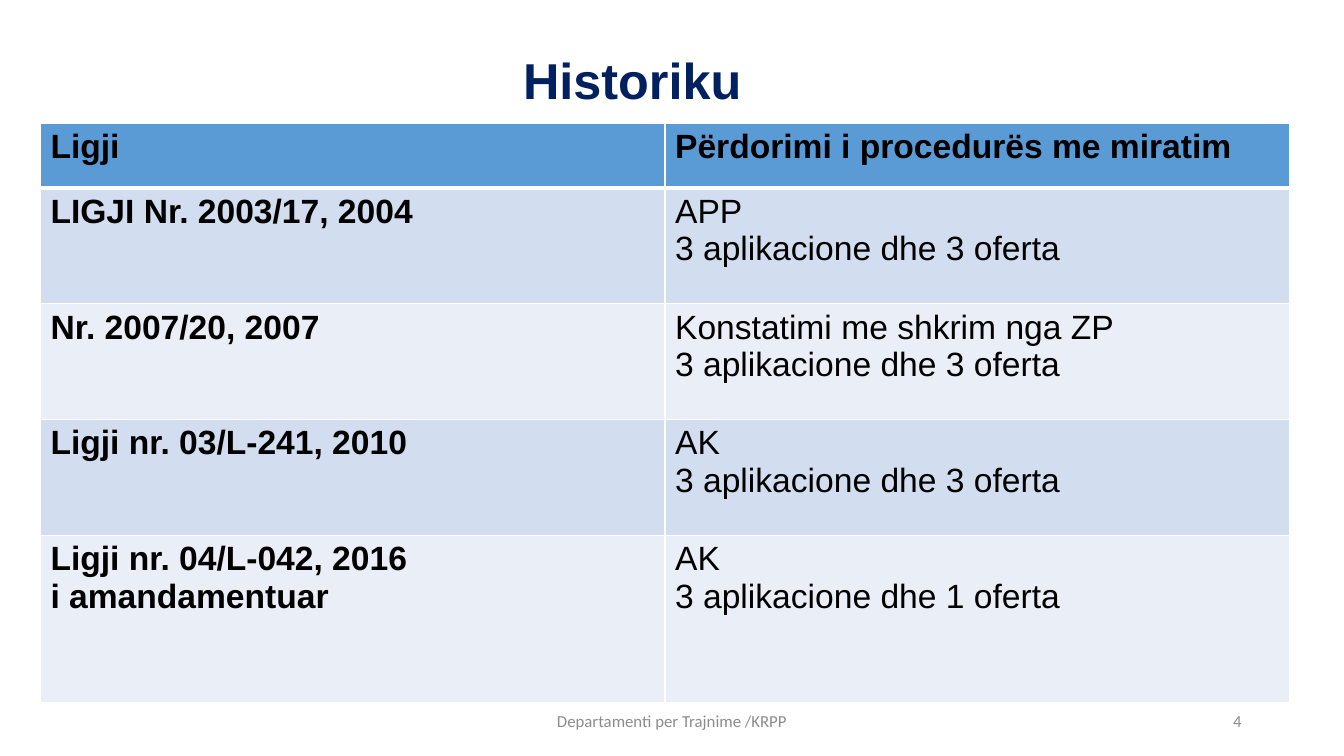
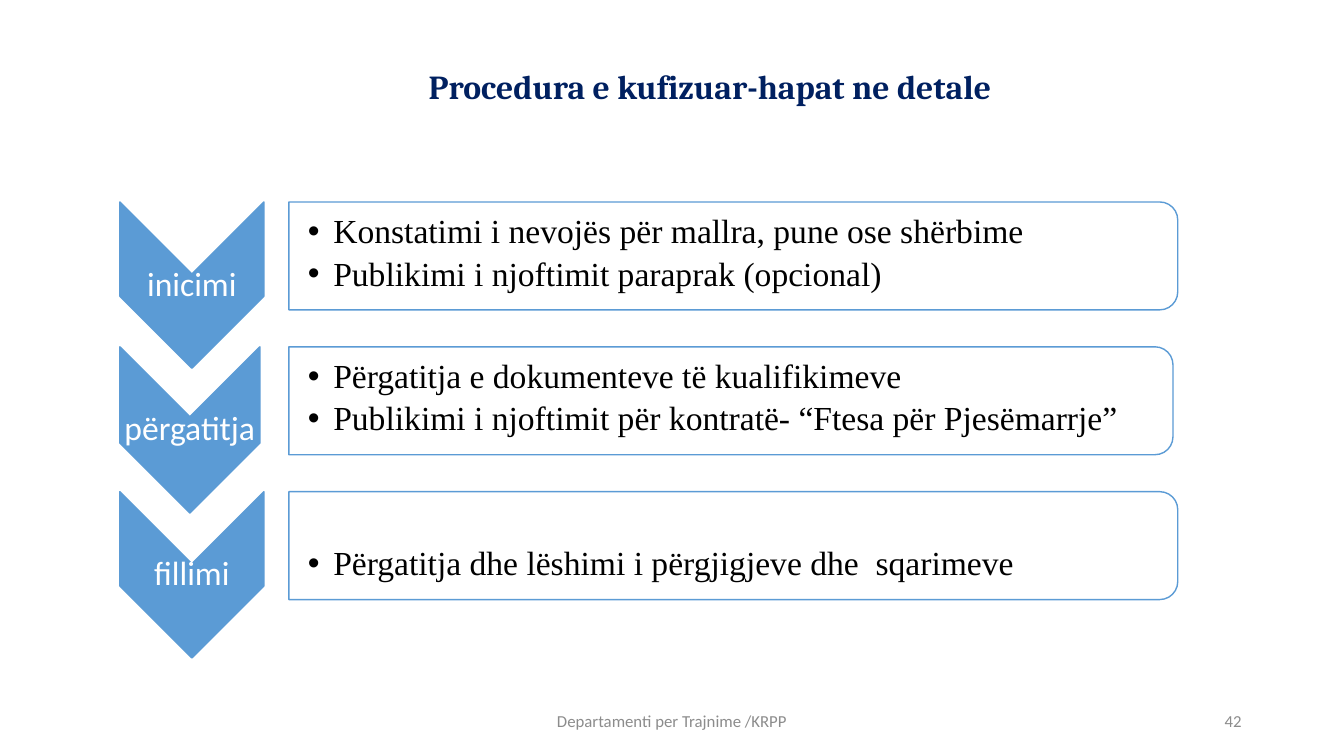
from dataclasses import dataclass
from typing import NamedTuple

from lxml import etree
from pptx import Presentation
from pptx.dml.color import RGBColor
from pptx.enum.shapes import MSO_SHAPE
from pptx.enum.text import MSO_ANCHOR, PP_ALIGN
from pptx.oxml.ns import qn
from pptx.util import Cm, Pt

LEFT, CENTER, RIGHT = PP_ALIGN.LEFT, PP_ALIGN.CENTER, PP_ALIGN.RIGHT
TOP, MIDDLE, BOTTOM = MSO_ANCHOR.TOP, MSO_ANCHOR.MIDDLE, MSO_ANCHOR.BOTTOM
CHEVRON = MSO_SHAPE.CHEVRON
PANEL = MSO_SHAPE.ROUND_2_SAME_RECTANGLE
BLANK_LAYOUT = 6


class Box(NamedTuple):
    """Left, top, width and height in centimetres."""
    left: float
    top: float
    width: float
    height: float

    def lengths(self):
        return [Cm(value) for value in self]


class TextStyle(NamedTuple):
    name: str
    size: float
    color: str
    bold: bool = False
    align: PP_ALIGN = LEFT
    line_spacing: float = 1.0
    space_after: float = 0


@dataclass(frozen=True)
class Theme:
    accent: str = "5B9BD5"
    white: str = "FFFFFF"
    bands: tuple = ("D2DEEF", "EAEFF7")
    history_title: TextStyle = TextStyle("Arial", 36, "002060", True, CENTER, 0.9)
    steps_title: TextStyle = TextStyle("Cambria", 24, "002060", True, CENTER, 0.9)
    cell: TextStyle = TextStyle("Arial", 24, "000000")
    cell_bold: TextStyle = TextStyle("Arial", 24, "000000", True)
    step_label: TextStyle = TextStyle("Calibri", 24, "FFFFFF", False, CENTER, 0.9)
    step_item: TextStyle = TextStyle("Times New Roman", 24, "000000", False, LEFT, 0.9, 4.4)
    footer: TextStyle = TextStyle("Calibri", 12, "8C8C8C", False, CENTER)
    page_number: TextStyle = TextStyle("Calibri", 12, "8C8C8C", False, RIGHT)


THEME = Theme()
FOOTER_TEXT = "Departamenti per Trajnime /KRPP"
FOOTER_BOX = Box(11.22, 17.65, 11.43, 1.01)
NUMBER_BOX = Box(23.92, 17.65, 7.62, 1.01)

HISTORY_ROWS = [
    (["Ligji"], ["Përdorimi i procedurës me miratim"]),
    (["LIGJI Nr. 2003/17, 2004"], ["APP", "3 aplikacione dhe 3 oferta"]),
    (["Nr. 2007/20, 2007"],
     ["Konstatimi me shkrim nga ZP", "3 aplikacione dhe 3 oferta"]),
    (["Ligji nr. 03/L-241, 2010"], ["AK", "3 aplikacione dhe 3 oferta"]),
    (["Ligji nr. 04/L-042, 2016", "i amandamentuar"],
     ["AK", "3 aplikacione dhe 1 oferta"]),
]
HISTORY_ROW_HEIGHTS = [1.63, 2.92, 2.92, 2.92, 4.22]

# Label, items, chevron width, panel width
STEPS = [
    ("inicimi",
     ["Konstatimi i nevojës për mallra, pune ose shërbime",
      "Publikimi i njoftimit paraprak (opcional)"], 3.63, 22.4),
    ("përgatitja",
     ["Përgatitja e dokumenteve të kualifikimeve",
      "Publikimi i njoftimit për kontratë- “Ftesa për Pjesëmarrje”"], 3.53, 22.28),
    ("fillimi",
     ["Përgatitja dhe lëshimi i përgjigjeve dhe  sqarimeve"], 3.63, 22.4),
]


def set_attributes(target, values):
    for name, value in values.items():
        setattr(target, name, value)


def set_fill(target, color):
    target.fill.solid()
    target.fill.fore_color.rgb = RGBColor.from_string(color)


def write_lines(frame, lines, style):
    for index, line in enumerate(lines):
        paragraph = frame.add_paragraph() if index else frame.paragraphs[0]
        set_attributes(paragraph, {
            "alignment": style.align,
            "line_spacing": style.line_spacing,
            "space_after": Pt(style.space_after),
        })
        run = paragraph.add_run()
        run.text = line
        set_attributes(run.font, {
            "name": style.name, "size": Pt(style.size), "bold": style.bold})
        run.font.color.rgb = RGBColor.from_string(style.color)


def add_text(slide, box, lines, style, anchor=MIDDLE, margins=(0.25, 0.13, 0.25, 0.13)):
    """Margins run left, top, right, bottom in centimetres."""
    frame = slide.shapes.add_textbox(*box.lengths()).text_frame
    sides = ("margin_left", "margin_top", "margin_right", "margin_bottom")
    set_attributes(frame, {"word_wrap": True, "vertical_anchor": anchor})
    set_attributes(frame, dict(zip(sides, map(Cm, margins))))
    write_lines(frame, lines, style)
    return frame


def add_bullets(frame, indent):
    for paragraph in frame.paragraphs:
        properties = paragraph._p.get_or_add_pPr()
        properties.set("marL", str(Cm(indent)))
        properties.set("indent", str(-Cm(indent)))
        etree.SubElement(properties, qn("a:buFont")).set("typeface", "Arial")
        etree.SubElement(properties, qn("a:buChar")).set("char", "•")


def add_turned_shape(slide, kind, box, fill):
    """Add a shape turned a quarter clockwise that covers the box as seen."""
    inset = (box.width - box.height) / 2
    unturned = Box(box.left + inset, box.top - inset, box.height, box.width)
    shape = slide.shapes.add_shape(kind, *unturned.lengths())
    shape.rotation = 90
    shape.shadow.inherit = False
    set_fill(shape, fill)
    shape.line.color.rgb = RGBColor.from_string(THEME.accent)
    shape.line.width = Pt(1)


def set_cell_borders(cell, bottom_width):
    properties = cell._tc.get_or_add_tcPr()
    widths = {"lnL": 1, "lnR": 1, "lnT": 1, "lnB": bottom_width}
    for index, (side, width) in enumerate(widths.items()):
        line = etree.Element(qn(f"a:{side}"), w=str(Pt(width)))
        fill = etree.SubElement(line, qn("a:solidFill"))
        etree.SubElement(fill, qn("a:srgbClr")).set("val", THEME.white)
        properties.insert(index, line)


def add_history_table(slide, box):
    table = slide.shapes.add_table(len(HISTORY_ROWS), 2, *box.lengths()).table
    for column in table.columns:
        column.width = Cm(box.width / 2)
    for row_index, (row, height) in enumerate(zip(HISTORY_ROWS, HISTORY_ROW_HEIGHTS)):
        table.rows[row_index].height = Cm(height)
        is_header = row_index == 0
        fill = THEME.accent if is_header else THEME.bands[(row_index - 1) % 2]
        for column_index, lines in enumerate(row):
            cell = table.cell(row_index, column_index)
            is_bold = is_header or column_index == 0
            write_lines(cell.text_frame, lines,
                        THEME.cell_bold if is_bold else THEME.cell)
            set_fill(cell, fill)
            set_cell_borders(cell, 3 if is_header else 1)


def add_step(slide, box, label, items, chevron_width):
    """Place a chevron with its label, and a panel of items up to the right edge."""
    chevron_box = Box(box.left, box.top, chevron_width, box.height)
    add_turned_shape(slide, CHEVRON, chevron_box, THEME.accent)
    add_text(slide, chevron_box, [label], THEME.step_label, margins=(0.05,) * 4)

    panel_offset = 4.26
    panel_box = Box(box.left + panel_offset, box.top, box.width - panel_offset, 2.72)
    add_turned_shape(slide, PANEL, panel_box, THEME.white)
    frame = add_text(slide, panel_box, items, THEME.step_item, BOTTOM,
                     margins=(0.48, 0.05, 0.05, 0.42))
    add_bullets(frame, 0.64)


def add_steps(slide, box):
    pitch, panel_offset, chevron_height = 3.65, 4.26, 4.19
    for index, (label, items, chevron_width, panel_width) in enumerate(STEPS):
        step_box = Box(box.left, box.top + index * pitch,
                       panel_offset + panel_width, chevron_height)
        add_step(slide, step_box, label, items, chevron_width)


def add_slide(presentation, number):
    """Add a blank slide with the shared footer and its page number."""
    slide = presentation.slides.add_slide(presentation.slide_layouts[BLANK_LAYOUT])
    add_text(slide, FOOTER_BOX, [FOOTER_TEXT], THEME.footer)
    add_text(slide, NUMBER_BOX, [str(number)], THEME.page_number)
    return slide


def build_history_slide(presentation):
    slide = add_slide(presentation, 4)
    add_text(slide, Box(0.76, 1.27, 30.35, 2.18), ["Historiku"],
             THEME.history_title, TOP)
    add_history_table(slide, Box(1.02, 3.1, 31.48, sum(HISTORY_ROW_HEIGHTS)))


def build_steps_slide(presentation):
    slide = add_slide(presentation, 42)
    add_text(slide, Box(7.11, 0.97, 21.56, 2.54),
             ["Procedura e kufizuar-hapat ne detale"], THEME.steps_title)
    add_steps(slide, Box(3.02, 5.09, 26.66, 11.49))


def main():
    presentation = Presentation()
    set_attributes(presentation, {"slide_width": Cm(33.87), "slide_height": Cm(19.05)})
    build_history_slide(presentation)
    build_steps_slide(presentation)
    presentation.save("out.pptx")


if __name__ == "__main__":
    main()
